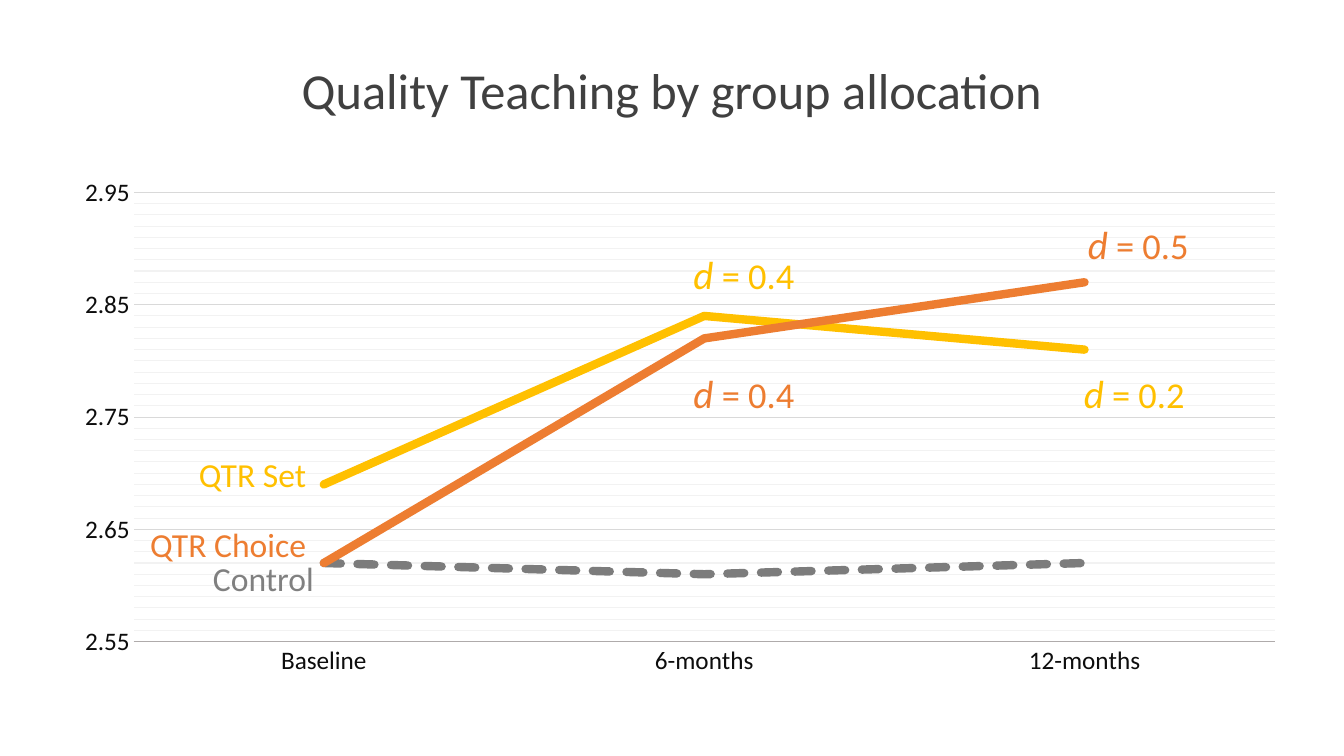
from copy import deepcopy
from lxml.etree import SubElement as Sub
from pptx import Presentation
from pptx.chart.data import CategoryChartData as Data
from pptx.dml.color import RGBColor as RGB
from pptx.enum.chart import XL_CHART_TYPE as Kind, XL_TICK_MARK as Tick
from pptx.enum.dml import MSO_LINE as Dash
from pptx.enum.text import MSO_ANCHOR as Anchor, MSO_AUTO_SIZE as Fit, PP_ALIGN as Align
from pptx.oxml.ns import qn
from pptx.util import Inches, Pt

WIDE, HIGH = Inches(13.33), Inches(7.5)
FACE = "Calibri"
TINTS = {
    "control": "7C7C7C", "set": "FFC000", "choice": "ED7D31",
    "name": "808080", "title": "404040", "tick": "0D0D0D",
    "base": "AFABAB", "major": "D9D9D9", "minor": "F2F2F2",
}
TIMES = ["Baseline", "6-months", "12-months"]
GROUPS = [
    ("Control", "control", (2.62, 2.61, 2.62)),
    ("QTR Set", "set", (2.69, 2.84, 2.81)),
    ("QTR Choice", "choice", (2.62, 2.82, 2.87)),
]
EFFECTS = [
    ("0.4", "set", 50.86, 32.4),
    ("0.4", "choice", 50.86, 48.13),
    ("0.5", "choice", 80.2, 28.53),
    ("0.2", "set", 79.9, 48.13),
]
# The space after a group name sets it clear of its line.
NAMES = [("QTR Set ", "set", 0), ("QTR Choice ", "choice", 25), ("Control", "name", 0)]


def tint(key):
    return RGB.from_string(TINTS[key])


def area(x, y, w, h):
    """Turn percentages of the slide into left, top, width and height."""
    return [int(side * part / 100)
            for side, part in zip((WIDE, HIGH, WIDE, HIGH), (x, y, w, h))]


def style(font, size, key):
    font.name = FACE
    font.size = Pt(size)
    font.color.rgb = tint(key)


def stroke(line, key, width):
    line.color.rgb = tint(key)
    line.width = Pt(width)


def add_box(slide, *spot):
    frame = slide.shapes.add_textbox(*area(*spot)).text_frame
    frame.word_wrap = True
    frame.auto_size = Fit.SHAPE_TO_FIT_TEXT
    return frame


def add_title(slide, text):
    title = slide.shapes.title
    title.left, title.top, title.width, title.height = area(4, 8.4, 92, 8.27)
    frame = title.text_frame
    frame.text = text
    frame.vertical_anchor = Anchor.TOP
    para = frame.paragraphs[0]
    para.alignment = Align.CENTER
    para.line_spacing = 0.85
    style(para.runs[0].font, 36, "title")


def add_effect(slide, value, key, x, y):
    para = add_box(slide, x, y, 14, 7.6).paragraphs[0]
    for text, size, slant in (("d", 28, True), (f" = {value}", 26, False)):
        run = para.add_run()
        run.text = text
        style(run.font, size, key)
        run.font.italic = slant


def add_names(slide):
    frame = add_box(slide, 8.63, 60.27, 15.45, 19.6)
    frame.text = "\n".join(text for text, _, _ in NAMES)
    for para, (_, key, gap) in zip(frame.paragraphs, NAMES):
        para.alignment = Align.RIGHT
        para.line_spacing = 0.85
        para.space_before = Pt(gap)
        style(para.runs[0].font, 24, key)


def set_plot(chart, **parts):
    """Fix the inner plot area as shares of the chart."""
    plot = chart._chartSpace.chart.plotArea
    for old in plot.findall(qn("c:layout")):
        plot.remove(old)
    layout = Sub(plot, qn("c:layout"))
    plot.insert(0, layout)
    manual = Sub(layout, qn("c:manualLayout"))
    tags = {"layoutTarget": "inner", "xMode": "edge", "yMode": "edge", **parts}
    for tag, val in tags.items():
        Sub(manual, qn(f"c:{tag}")).set("val", str(val))


def set_grid(axis):
    """Give minor gridlines the major style in a lighter tint."""
    axis.has_major_gridlines = axis.has_minor_gridlines = True
    stroke(axis.major_gridlines.format.line, "major", 0.75)
    root = axis._element
    look = deepcopy(root.find(f"{qn('c:majorGridlines')}/{qn('c:spPr')}"))
    next(look.iter(qn("a:srgbClr"))).set("val", TINTS["minor"])
    root.find(qn("c:minorGridlines")).append(look)


def set_axes(chart):
    times, scores = chart.category_axis, chart.value_axis
    for axis in (times, scores):
        axis.major_tick_mark = axis.minor_tick_mark = Tick.NONE
        style(axis.tick_labels.font, 18, "tick")
    stroke(times.format.line, "base", 1)
    scores.format.line.fill.background()
    scores.minimum_scale, scores.maximum_scale = 2.55, 2.95
    scores.major_unit, scores.minor_unit = 0.1, 0.01
    set_grid(scores)
    scores.tick_labels.number_format = "0.00"
    scores.tick_labels.number_format_is_linked = False


def add_lines(slide):
    data = Data(number_format="0.00")
    data.categories = TIMES
    for name, _, values in GROUPS:
        data.add_series(name, values)
    spot = area(5.1, 22.53, 89.8, 69.6)
    chart = slide.shapes.add_chart(Kind.LINE, *spot, data).chart
    chart.has_legend = chart.has_title = False
    chart.font.name = FACE
    chart.font.size = Pt(10)
    chart.plots[0].vary_by_categories = False
    set_plot(chart, x=0.054, y=0.042, w=0.946, h=0.854)
    set_axes(chart)
    for series, (_, key, _) in zip(chart.plots[0].series, GROUPS):
        series.smooth = False
        line = series.format.line
        stroke(line, key, 6)
        if key == "control":
            line.dash_style = Dash.SQUARE_DOT
        series._element.find(f"{qn('c:spPr')}/{qn('a:ln')}").set("cap", "rnd")


def main():
    deck = Presentation()
    deck.slide_width, deck.slide_height = WIDE, HIGH
    slide = deck.slides.add_slide(deck.slide_layouts[5])
    add_lines(slide)
    for effect in EFFECTS:
        add_effect(slide, *effect)
    add_names(slide)
    add_title(slide, "Quality Teaching by group allocation")
    deck.save("out.pptx")


if __name__ == "__main__":
    main()
